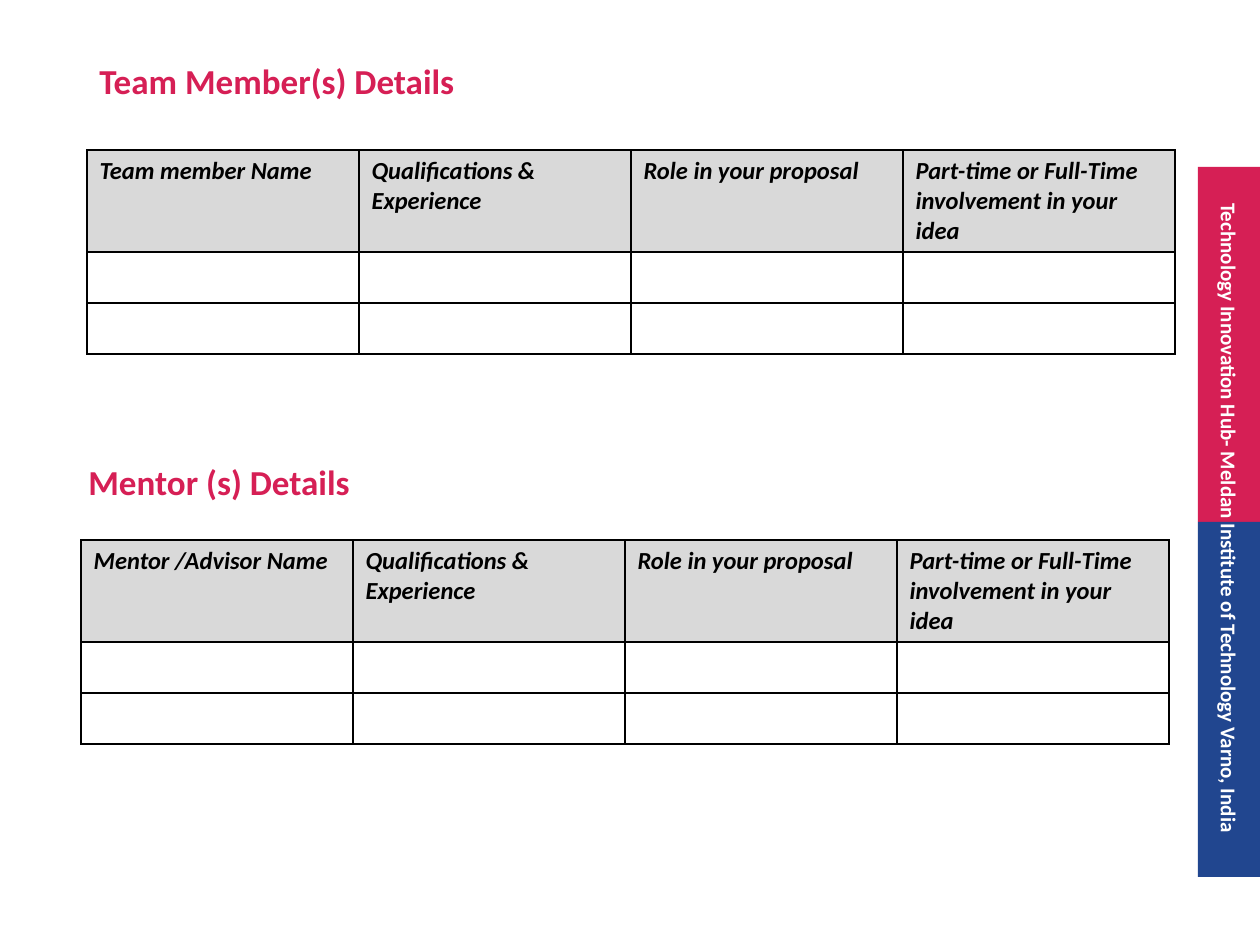
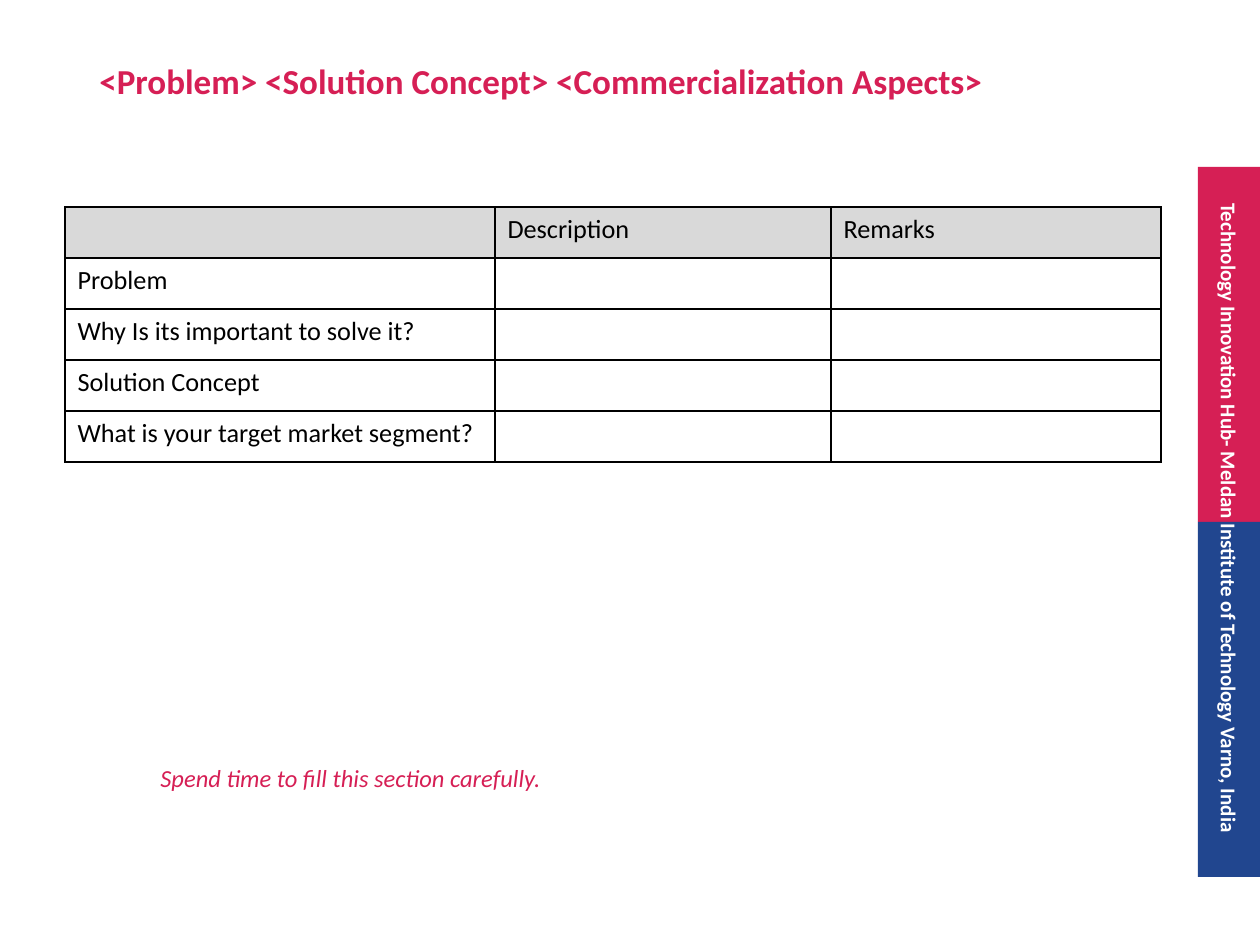
from pptx import Presentation
from pptx.dml.color import RGBColor
from pptx.enum.shapes import MSO_SHAPE
from pptx.enum.text import MSO_ANCHOR, PP_ALIGN
from pptx.oxml import parse_xml
from pptx.oxml.ns import nsdecls
from pptx.util import Pt

PX = 914400 / 126  # EMU per pixel

CRIMSON = RGBColor(0xD6, 0x1F, 0x55)
NAVY = RGBColor(0x21, 0x46, 0x8F)
HEADER_GREY = RGBColor(0xD9, 0xD9, 0xD9)
BLACK = RGBColor(0, 0, 0)
WHITE = RGBColor(0xFF, 0xFF, 0xFF)

FONT = "Calibri"
ROW_HEIGHT = 51
TITLE_STYLE = dict(size=20, color=CRIMSON, bold=True, anchor=MSO_ANCHOR.MIDDLE, line_spacing=0.9)


def write_text(target, text, size, color, bold=False, italic=False,
               align=PP_ALIGN.LEFT, anchor=MSO_ANCHOR.TOP, line_spacing=None, box=None):
    """Write into a table cell, or into a new text box when target is a slide."""
    shape = target
    if box:
        shape = target.shapes.add_textbox(*[round(length * PX) for length in box])
        shape.text_frame.word_wrap = True
    shape.text_frame.vertical_anchor = anchor
    paragraph = shape.text_frame.paragraphs[0]
    paragraph.alignment = align
    paragraph.line_spacing = line_spacing
    run = paragraph.add_run()
    run.text = text
    run.font.name = FONT
    run.font.size = Pt(size)
    run.font.color.rgb = color
    run.font.bold = bold
    run.font.italic = italic
    return shape


def add_grid(slide, left, top, widths, heights, rows, **text_format):
    """Add a black-ruled table with a grey header row."""
    frame = slide.shapes.add_table(
        len(rows), len(widths), round(left * PX), round(top * PX),
        round(sum(widths) * PX), round(sum(heights) * PX))
    table = frame.table
    table.first_row = False
    table.horz_banding = False
    for column, width in zip(table.columns, widths):
        column.width = round(width * PX)
    for row, height in zip(table.rows, heights):
        row.height = round(height * PX)
    for row_index, texts in enumerate(rows):
        for column_index, text in enumerate(texts):
            cell = table.cell(row_index, column_index)
            properties = cell._tc.get_or_add_tcPr()
            for side in ("lnL", "lnR", "lnT", "lnB"):
                properties.append(parse_xml(
                    f'<a:{side} {nsdecls("a")} w="12700"><a:solidFill>'
                    f'<a:srgbClr val="{BLACK}"/></a:solidFill></a:{side}>'))
            if row_index == 0:
                cell.fill.solid()
                cell.fill.fore_color.rgb = HEADER_GREY
            else:
                cell.fill.background()
            if text:
                write_text(cell, text, color=BLACK, **text_format)


presentation = Presentation()
presentation.slide_width = round(1260 * PX)
presentation.slide_height = round(945 * PX)

# Side bands and title shared by both slides
slides = []
for title in ("Team Member(s) Details",
              "<Problem> <Solution Concept> <Commercialization Aspects>"):
    slide = presentation.slides.add_slide(presentation.slide_layouts[6])
    slides.append(slide)
    for band_top, band_color in ((167, CRIMSON), (522, NAVY)):
        band = slide.shapes.add_shape(
            MSO_SHAPE.RECTANGLE,
            *[round(length * PX) for length in (1198, band_top, 62, 355)])
        band.shadow.inherit = False
        band.fill.solid()
        band.fill.fore_color.rgb = band_color
        band.line.fill.background()
    side_label = write_text(
        slide, "Technology Innovation Hub- Meldan Institute of Technology Varno, India",
        size=12, color=WHITE, bold=True, align=PP_ALIGN.CENTER, box=(878, 499, 702, 38))
    side_label.rotation = 90
    write_text(slide, title, box=(87, 50, 1086, 67), **TITLE_STYLE)

people_slide, concept_slide = slides

# Team and mentor tables
for name_header, left, top in (("Team member Name", 87, 150),
                               ("Mentor /Advisor Name", 81, 540)):
    headers = [name_header, "Qualifications & Experience", "Role in your proposal",
               "Part-time or Full-Time involvement in your idea"]
    add_grid(people_slide, left, top, [272] * 4, [2 * ROW_HEIGHT, ROW_HEIGHT, ROW_HEIGHT],
             [headers, [""] * 4, [""] * 4], size=14, bold=True, italic=True)
write_text(people_slide, "Mentor (s) Details", box=(76, 451, 1086, 67), **TITLE_STYLE)

# Problem and solution table
questions = ["Problem", "Why Is its important to solve it?", "Solution Concept",
             "What is your target market segment?"]
concept_rows = [["", "Description", "Remarks"]] + [[question, "", ""] for question in questions]
add_grid(concept_slide, 65, 207, [430, 336, 330], [ROW_HEIGHT] * len(concept_rows),
         concept_rows, size=15)
write_text(concept_slide, "Spend time to fill this section carefully.",
           size=14, color=CRIMSON, italic=True, box=(148, 757, 993, 43))

presentation.save("out.pptx")
